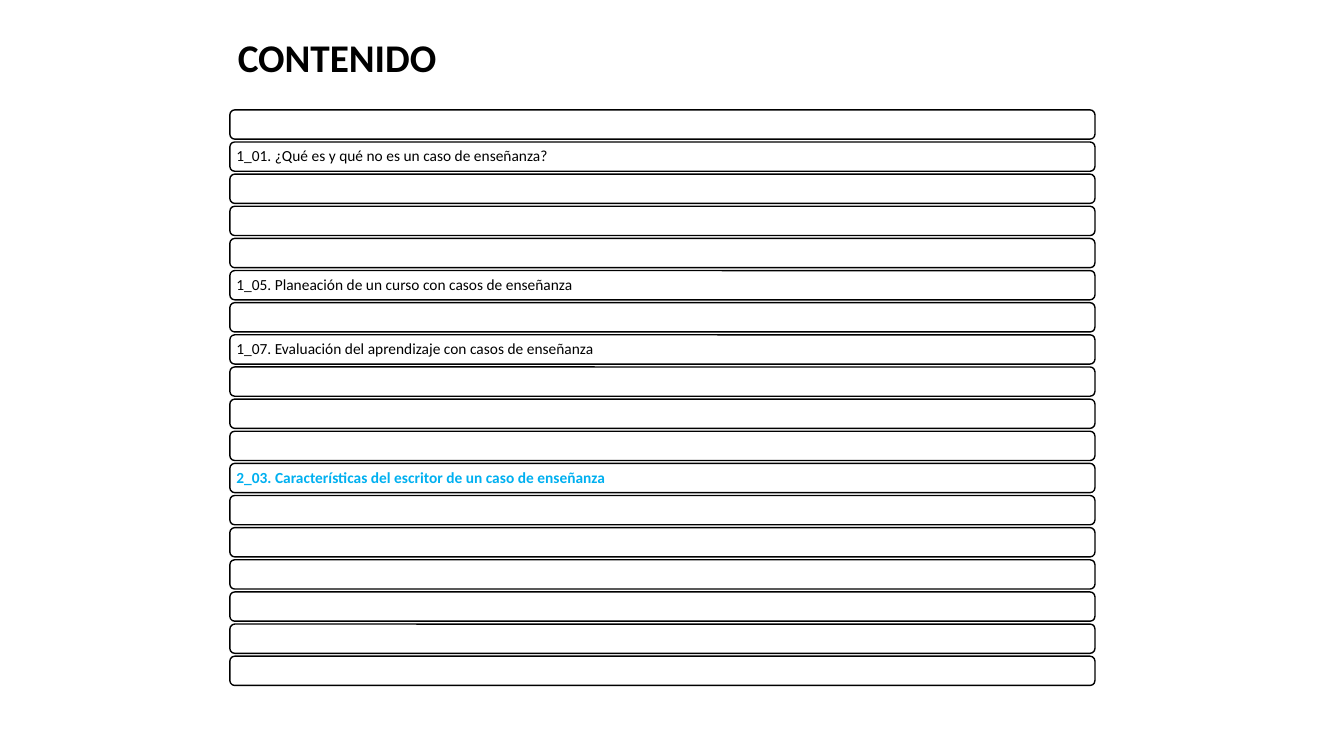
from pptx import Presentation
from pptx.dml.color import RGBColor
from pptx.enum.shapes import MSO_SHAPE
from pptx.enum.text import MSO_ANCHOR, PP_ALIGN
from pptx.util import Inches, Pt

COLORS = {"ink": "000000", "paper": "FFFFFF", "current": "00B0F0"}
FONT = "Calibri"
HEADING = "CONTENIDO"
TOPICS = [
    "",
    "1_01. ¿Qué es y qué no es un caso de enseñanza?",
    "",
    "",
    "",
    "1_05. Planeación de un curso con casos de enseñanza",
    "",
    "1_07. Evaluación del aprendizaje con casos de enseñanza",
    "",
    "",
    "",
    "2_03. Características del escritor de un caso de enseñanza",
    "",
    "",
    "",
    "",
    "",
    "",
]
CURRENT_TOPIC = 11

LEFT, WIDTH, HEIGHT = 2.28, 8.58, 0.29
FIRST_TOP, LAST_TOP = 1.09, 6.51
PITCH = (LAST_TOP - FIRST_TOP) / (len(TOPICS) - 1)


def write(frame, text, size, color="ink", bold=False, spacing=None):
    paragraph = frame.paragraphs[0]
    paragraph.alignment = PP_ALIGN.LEFT
    paragraph.line_spacing = spacing
    run = paragraph.add_run()
    run.text = text
    run.font.name = FONT
    run.font.size = Pt(size)
    run.font.bold = bold
    run.font.color.rgb = RGBColor.from_string(COLORS[color])


def add_topic(slide, index, topic):
    row = slide.shapes.add_shape(
        MSO_SHAPE.ROUNDED_RECTANGLE,
        Inches(LEFT), Inches(FIRST_TOP + index * PITCH), Inches(WIDTH), Inches(HEIGHT),
    )
    row.shadow.inherit = False
    row.fill.solid()
    row.fill.fore_color.rgb = RGBColor.from_string(COLORS["paper"])
    row.line.color.rgb = RGBColor.from_string(COLORS["ink"])
    row.line.width = Pt(1)
    if topic:
        frame = row.text_frame
        frame.word_wrap = True
        frame.vertical_anchor = MSO_ANCHOR.MIDDLE
        frame.margin_left = frame.margin_right = Inches(0.05)
        frame.margin_top = frame.margin_bottom = Inches(0.05)
        current = index == CURRENT_TOPIC
        write(frame, topic, size=11, color="current" if current else "ink",
              bold=current, spacing=0.9)


def main():
    deck = Presentation()
    deck.slide_width, deck.slide_height = Inches(13.33), Inches(7.5)
    slide = deck.slides.add_slide(deck.slide_layouts[6])
    for index, topic in enumerate(TOPICS):
        add_topic(slide, index, topic)
    heading = slide.shapes.add_textbox(Inches(2.26), Inches(0.28), Inches(2.19), Inches(0.57))
    heading.text_frame.word_wrap = False
    write(heading.text_frame, HEADING, size=28, bold=True)
    deck.save("out.pptx")


if __name__ == "__main__":
    main()
